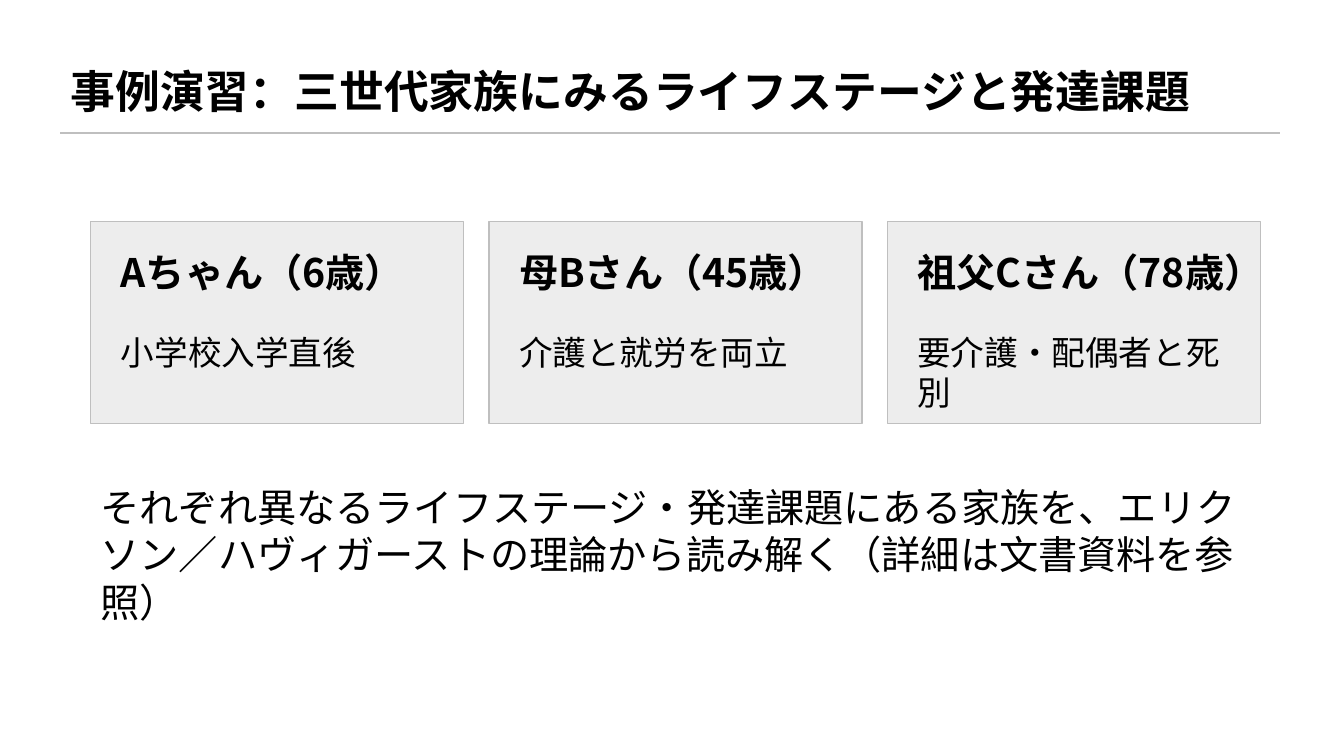
import pptx
import pptx.util
import pptx.dml.color
import pptx.enum.shapes
import pptx.enum.text
import pptx.oxml.ns
from lxml import etree

Inches = pptx.util.Inches
ANCHOR = pptx.enum.text.MSO_ANCHOR
FONT = "Noto Sans CJK JP"
COLORS = {
    name: pptx.dml.color.RGBColor.from_string(value)
    for name, value in {"text": "000000", "card": "EDEDED", "line": "BFBFBF"}.items()
}

prs = pptx.Presentation()
prs.slide_width = Inches(13.33)
prs.slide_height = Inches(7.5)
s = prs.slides.add_slide(prs.slide_layouts[6])


def add_text(text, x, y, w, h, size, bold=False, anchor=ANCHOR.TOP):
    tf = s.shapes.add_textbox(Inches(x), Inches(y), Inches(w), Inches(h)).text_frame
    tf.word_wrap = True
    tf.vertical_anchor = anchor
    tf.text = text
    r = tf.paragraphs[0].runs[0]
    r.font.name = FONT
    r.font.size = pptx.util.Pt(size)
    r.font.bold = bold
    r.font.color.rgb = COLORS["text"]
    # Japanese glyphs use the East Asian typeface
    ea = etree.SubElement(r.font._element, pptx.oxml.ns.qn("a:ea"))
    ea.set("typeface", FONT)


# Title and rule
add_text("事例演習：三世代家族にみるライフステージと発達課題",
         0.6, 0.45, 12.1, 0.9, 32, True, ANCHOR.MIDDLE)
rule = s.shapes.add_connector(pptx.enum.shapes.MSO_CONNECTOR.STRAIGHT,
                              Inches(0.6), Inches(1.32), Inches(12.7), Inches(1.32))
rule.line.color.rgb = COLORS["line"]
rule.line.width = pptx.util.Pt(1)
etree.SubElement(rule._element.spPr, pptx.oxml.ns.qn("a:effectLst"))

# Family member cards: name, situation, name width
members = [
    ("Aちゃん（6歳）", "小学校入学直後", 3.3),
    ("母Bさん（45歳）", "介護と就労を両立", 3.3),
    ("祖父Cさん（78歳）", "要介護・配偶者と死別", 3.65),
]
for i, (name, situation, name_width) in enumerate(members):
    x = 0.9 + i * 3.95
    sp = s.shapes.add_shape(pptx.enum.shapes.MSO_SHAPE.RECTANGLE,
                            Inches(x), Inches(2.2), Inches(3.7), Inches(2))
    sp.shadow.inherit = False
    sp.fill.solid()
    sp.fill.fore_color.rgb = COLORS["card"]
    sp.line.color.rgb = COLORS["line"]
    sp.line.width = pptx.util.Pt(1)
    add_text(name, x + 0.2, 2.4, name_width, 0.6, 28, True, ANCHOR.MIDDLE)
    add_text(situation, x + 0.2, 3.24, 3.3, 0.9, 24)

# Summary
add_text("それぞれ異なるライフステージ・発達課題にある家族を、エリクソン／ハヴィガーストの"
         "理論から読み解く（詳細は文書資料を参照）", 0.9, 4.75, 11.5, 1, 28)

prs.save("out.pptx")
